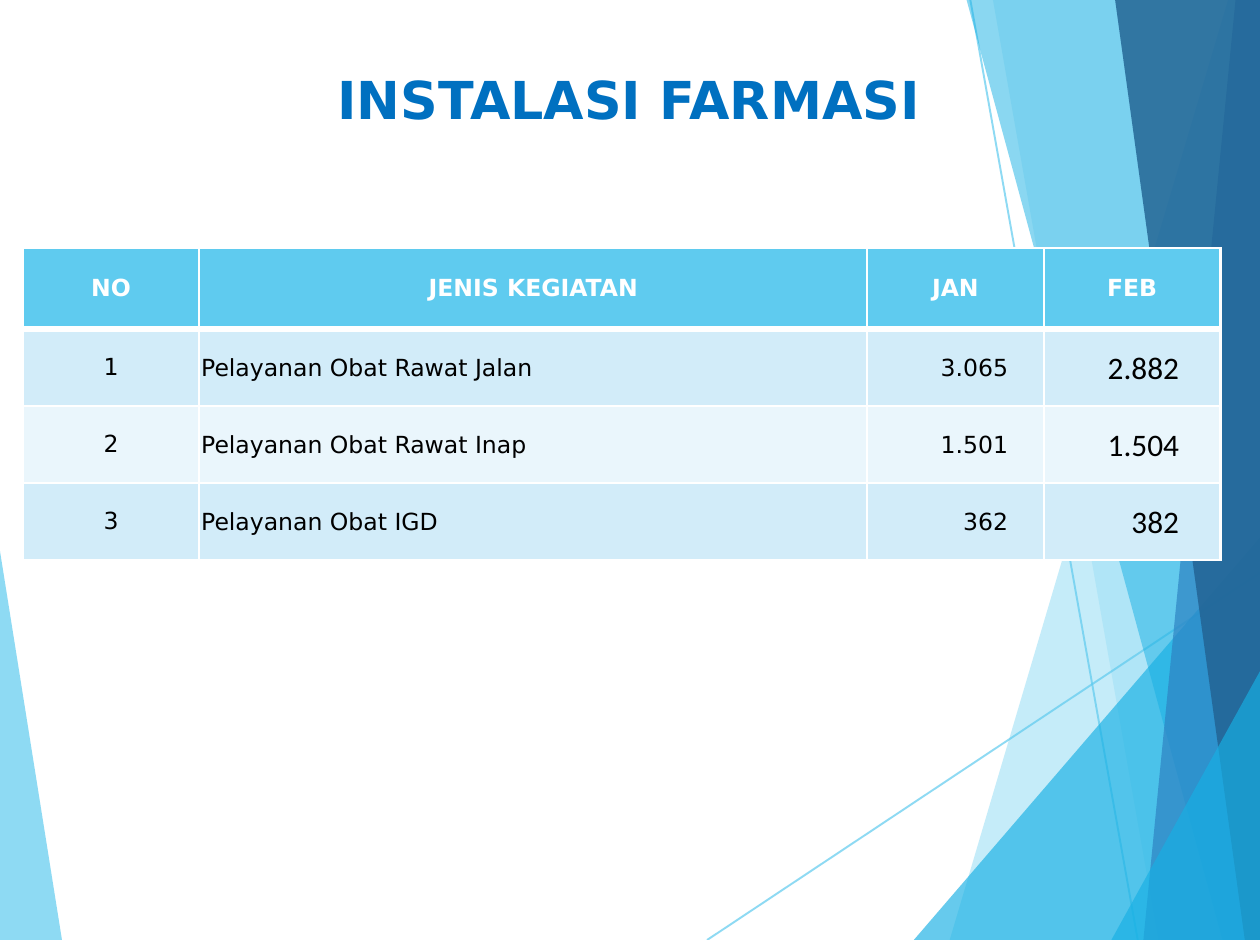
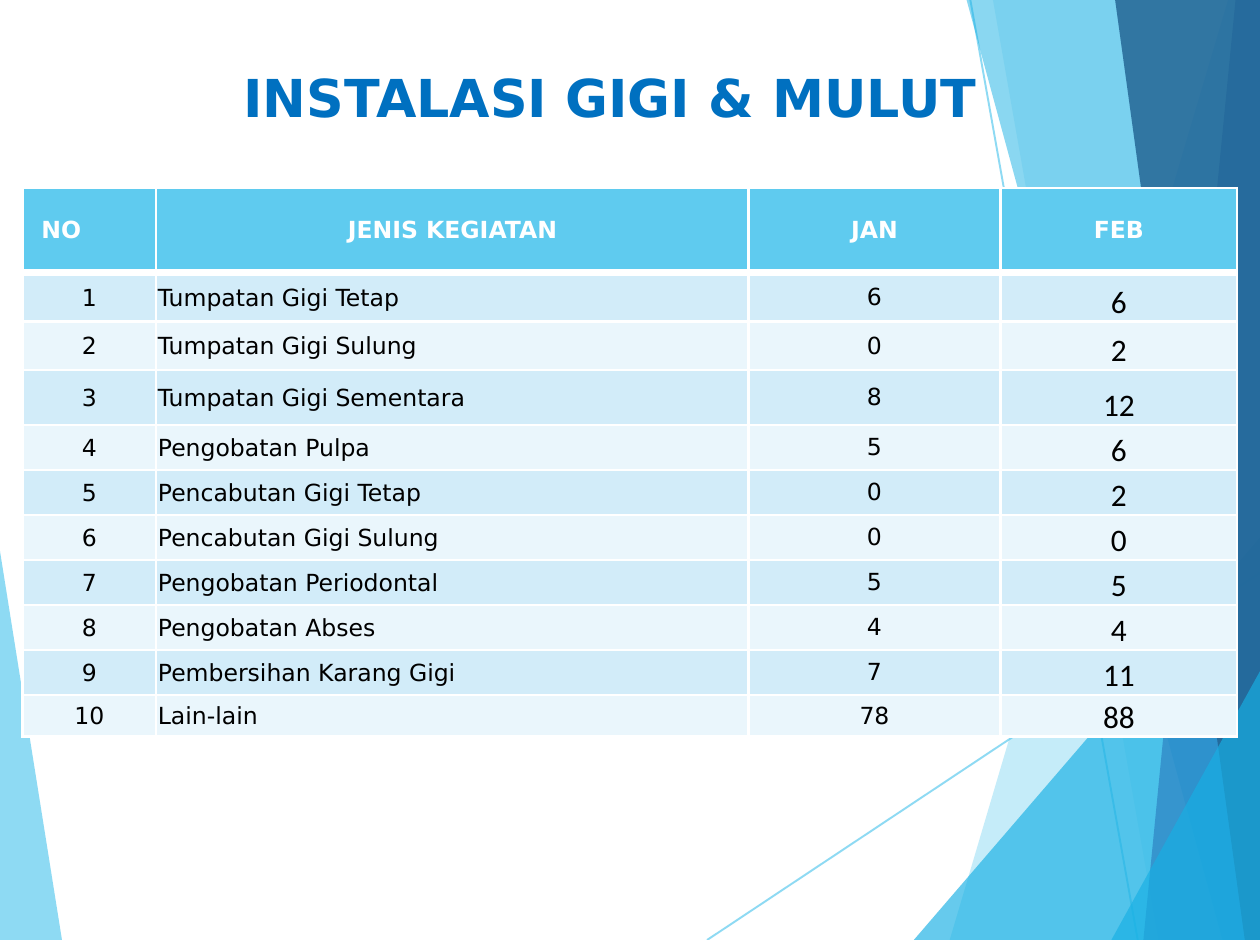
from lxml import etree
from pptx import Presentation
from pptx.dml.color import RGBColor
from pptx.enum.shapes import MSO_CONNECTOR
from pptx.enum.text import MSO_ANCHOR, PP_ALIGN
from pptx.oxml.ns import qn
from pptx.util import Inches, Pt

LEFT, CENTER, RIGHT = PP_ALIGN.LEFT, PP_ALIGN.CENTER, PP_ALIGN.RIGHT
TOP, MIDDLE, BOTTOM = MSO_ANCHOR.TOP, MSO_ANCHOR.MIDDLE, MSO_ANCHOR.BOTTOM
STRAIGHT = MSO_CONNECTOR.STRAIGHT

W, H = 6.7, 5
FONT, NUMBER_FONT = "DejaVu Sans", "Calibri"
COLORS = {
    "sky": "5FCBEF", "cyan": "17B0E4", "blue": "2E83C3", "navy": "226292",
    "title": "0070C0", "white": "FFFFFF", "black": "000000",
    "odd_row": "D2ECF9", "even_row": "EAF6FC",
}

# Facets and rays, back to front: colour, opacity in percent, points
LEFT_FACET = ("sky", 70, [(0, 2.93), (0.33, H), (0, H)])
RAYS = [((3.76, H), (6.71, 3.04)), ((5.16, 0), (6.05, H))]
RIGHT_FACETS = [
    ("sky", 36, [(6.53, 0), (5.05, H), (W, H), (W, 0)]),
    ("sky", 20, [(5.28, 0), (6.16, H), (W, H), (W, 0)]),
    ("cyan", 66, [(4.86, H), (W, 2.86), (W, H)]),
    ("cyan", 50, [(5.14, 0), (6.5, H), (W, H), (W, 0)]),
    ("blue", 70, [(6.57, 0), (6.08, H), (W, H), (W, 0)]),
    ("navy", 82, [(5.93, 0), (6.62, H), (W, H), (W, 0)]),
    ("cyan", 66, [(5.91, H), (W, 3.57), (W, H)]),
]

# Cell insets: left, top, right, bottom
WIDE, THIN, NONE = (0.1, 0.05, 0.1, 0.05), (0.01, 0.01, 0.01, 0), (0, 0, 0, 0)
HEADERS = ["NO", "JENIS KEGIATAN", "JAN", "FEB"]

# Body columns: alignment, anchor, insets, font, size
PHARMACY_COLUMNS = [
    (CENTER, MIDDLE, WIDE, FONT, 9),
    (LEFT, MIDDLE, THIN, FONT, 9),
    (RIGHT, MIDDLE, (0.01, 0.01, 0.19, 0), FONT, 9),
    (RIGHT, MIDDLE, (0.01, 0.01, 0.22, 0), NUMBER_FONT, 12),
]
PHARMACY = [
    ("Pelayanan Obat Rawat Jalan", "3.065", "2.882"),
    ("Pelayanan Obat Rawat Inap", "1.501", "1.504"),
    ("Pelayanan Obat IGD", "362", "382"),
]
DENTAL_COLUMNS = [
    (CENTER, MIDDLE, THIN, FONT, 9),
    (LEFT, MIDDLE, THIN, FONT, 9),
    (CENTER, MIDDLE, NONE, FONT, 9),
    (CENTER, BOTTOM, NONE, NUMBER_FONT, 12),
]
DENTAL = [
    ("Tumpatan Gigi Tetap", "6", "6"),
    ("Tumpatan Gigi Sulung", "0", "2"),
    ("Tumpatan Gigi Sementara", "8", "12"),
    ("Pengobatan Pulpa", "5", "6"),
    ("Pencabutan Gigi Tetap", "0", "2"),
    ("Pencabutan Gigi Sulung", "0", "0"),
    ("Pengobatan Periodontal", "5", "5"),
    ("Pengobatan Abses", "4", "4"),
    ("Pembersihan Karang Gigi", "7", "11"),
    ("Lain-lain", "78", "88"),
]


def rgb(name):
    return RGBColor.from_string(COLORS[name])


def paint(fill, color, opacity):
    """Solid fill with an opacity in percent."""
    fill.solid()
    fill.fore_color.rgb = rgb(color)
    clr = fill._xPr.find(qn("a:solidFill"))[0]
    etree.SubElement(clr, qn("a:alpha"), val=str(opacity * 1000))


def add_facet(s, left, top, color, opacity, points):
    pts = [(Inches(left + x), Inches(top + y)) for x, y in points]
    builder = s.shapes.build_freeform(*pts[0])
    builder.add_line_segments(pts[1:], close=True)
    sp = builder.convert_to_shape()
    sp.shadow.inherit = False
    paint(sp.fill, color, opacity)
    sp.line.fill.background()


def add_ray(s, left, top, start, end):
    (x1, y1), (x2, y2) = start, end
    ray = s.shapes.add_connector(STRAIGHT, Inches(left + x1), Inches(top + y1),
                                 Inches(left + x2), Inches(top + y2))
    ray.line.width = Pt(0.75)
    paint(ray.line.fill, "sky", 70)
    etree.SubElement(ray._element.spPr, qn("a:effectLst"))


def add_backdrop(s, left=0, top=0):
    add_facet(s, left, top, *LEFT_FACET)
    for start, end in RAYS:
        add_ray(s, left, top, start, end)
    for facet in RIGHT_FACETS:
        add_facet(s, left, top, *facet)


def set_text(p, text, align, font, size, color, bold=False):
    p.text = text
    p.alignment = align
    p.font.name = font
    p.font.size = Pt(size)
    p.font.bold = bold
    p.font.color.rgb = rgb(color)


def add_title(s, box, text, right_inset=0.1):
    tf = s.shapes.add_textbox(*map(Inches, box)).text_frame
    tf.word_wrap = True
    tf.vertical_anchor = TOP
    tf.margin_right = Inches(right_inset)
    set_text(tf.paragraphs[0], text, CENTER, FONT, 20, "title", True)


def set_borders(cell, top, bottom):
    """White borders; top and bottom widths in points."""
    tcPr = cell._tc.get_or_add_tcPr()
    widths = {"a:lnL": 1, "a:lnR": 1, "a:lnT": top, "a:lnB": bottom}
    for i, (tag, width) in enumerate(widths.items()):
        ln = etree.Element(qn(tag), w=str(Pt(width)))
        fill = etree.SubElement(ln, qn("a:solidFill"))
        etree.SubElement(fill, qn("a:srgbClr"), val=COLORS["white"])
        tcPr.insert(i, ln)


def style_cell(cell, text, column, fill, color, bold, top, bottom):
    align, anchor, insets, font, size = column
    cell.fill.solid()
    cell.fill.fore_color.rgb = rgb(fill)
    cell.vertical_anchor = anchor
    (cell.margin_left, cell.margin_top,
     cell.margin_right, cell.margin_bottom) = map(Inches, insets)
    set_text(cell.text_frame.paragraphs[0], text, align, font, size, color, bold)
    set_borders(cell, top, bottom)


def add_activity_table(s, left, top, widths, heights, columns, activities, no_align=CENTER):
    table = s.shapes.add_table(len(heights), len(widths), Inches(left), Inches(top),
                               Inches(sum(widths)), Inches(sum(heights))).table
    for column, width in zip(table.columns, widths):
        column.width = Inches(width)
    for row, height in zip(table.rows, heights):
        row.height = Inches(height)
    for c, text in enumerate(HEADERS):
        header = (CENTER if c else no_align, MIDDLE, WIDE, FONT, 9)
        style_cell(table.cell(0, c), text, header, "sky", "white", True, 1, 3)
    for r, activity in enumerate(activities, 1):
        fill = "odd_row" if r % 2 else "even_row"
        for c, text in enumerate((str(r), *activity)):
            style_cell(table.cell(r, c), text, columns[c], fill, "black", False,
                       3 if r == 1 else 1, 1)


def add_slide(prs):
    s = prs.slides.add_slide(prs.slide_layouts[6])
    add_backdrop(s)
    return s


def pharmacy_slide(prs):
    s = add_slide(prs)
    add_title(s, (0.38, 0.31, 6.03, 0.83), "INSTALASI FARMASI", right_inset=0.2)
    add_activity_table(s, 0.12, 1.32, [0.94, 3.55, 0.94, 0.94], [0.43] + [0.41] * 3,
                       PHARMACY_COLUMNS, PHARMACY)


def dental_slide(prs):
    s = add_slide(prs)
    add_title(s, (0.2, 0.3, 6.09, 0.55), "INSTALASI GIGI & MULUT")
    add_activity_table(s, 0.12, 1, [0.71, 3.15, 1.34, 1.26],
                       [0.45, 0.26, 0.26, 0.29] + [0.24] * 6 + [0.22],
                       DENTAL_COLUMNS, DENTAL, no_align=LEFT)


def main():
    prs = Presentation()
    prs.slide_width, prs.slide_height = Inches(W), Inches(H)
    pharmacy_slide(prs)
    dental_slide(prs)
    prs.save("out.pptx")


if __name__ == "__main__":
    main()
